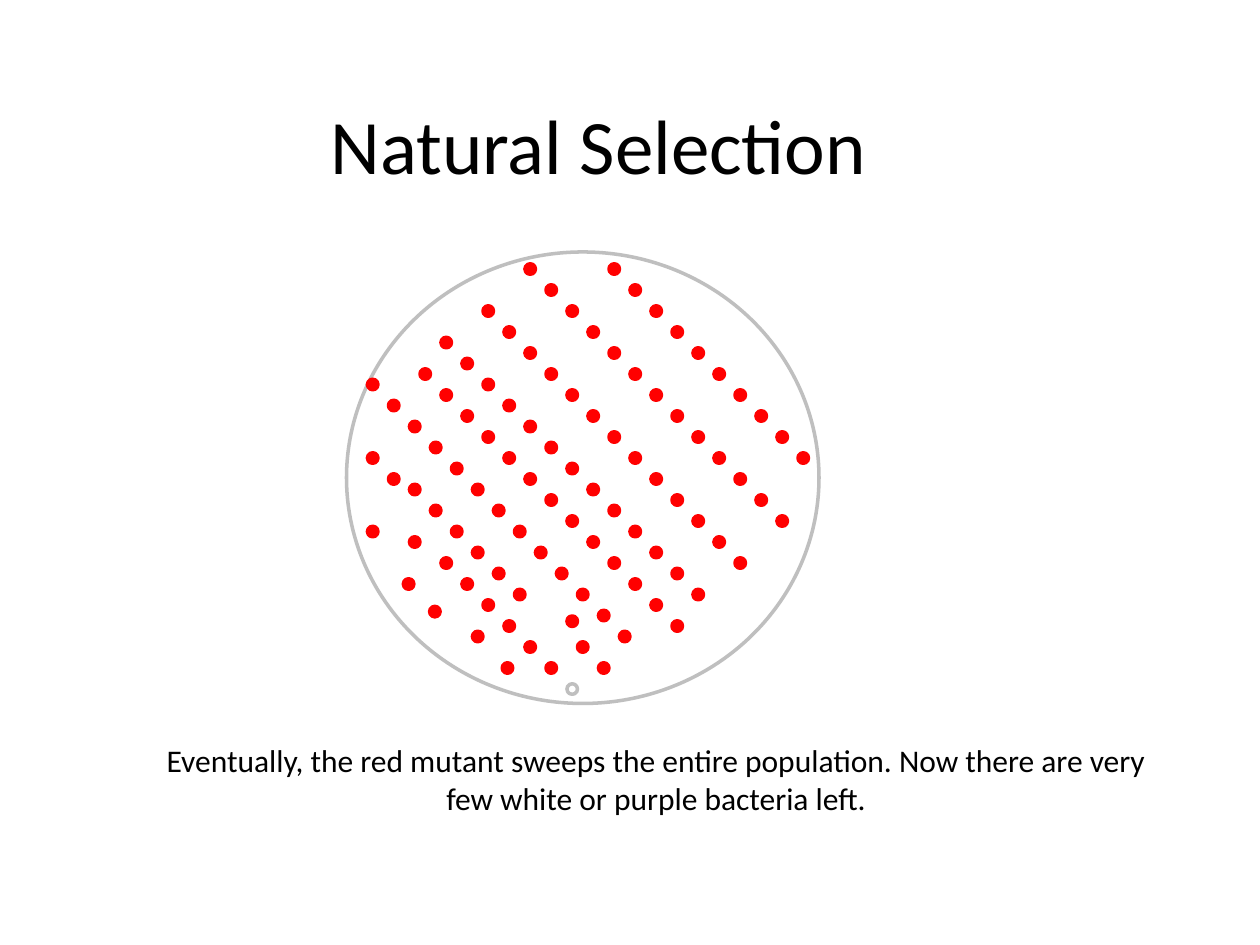
from dataclasses import dataclass

from pptx import Presentation
from pptx.dml.color import RGBColor
from pptx.enum.shapes import MSO_SHAPE as Shape
from pptx.enum.text import MSO_ANCHOR as Anchor, MSO_AUTO_SIZE as AutoSize, PP_ALIGN as Align
from pptx.slide import Slide
from pptx.text.text import TextFrame
from pptx.util import Pt

BLACK, WHITE, GREY, RED = "000000", "FFFFFF", "BFBFBF", "FF0000"
DOT_SIZE = 6
STEP = 12  # each bacterium in a row sits one step right and one step down


@dataclass
class DotRow:
    left: float
    top: float
    count: int = 1


ROWS = [
    DotRow(240, 210.75, 13),
    DotRow(252, 192.75, 13),
    DotRow(276, 174.75, 13),
    DotRow(300, 150.75, 13),
    DotRow(348, 150.75, 10),
    DotRow(252, 318.75, 6),
    DotRow(210, 216.75, 13),
    DotRow(234, 276.75, 6),
    DotRow(210, 258.75, 2),
    DotRow(330, 366.75, 2),
    # Single bacteria near the lower edge
    DotRow(230.5, 330.75),
    DotRow(270, 360.75),
    DotRow(210, 300.75),
    DotRow(287, 378.75),
    DotRow(234, 306.75),
    DotRow(245.5, 346.5),
    DotRow(324, 352),
]


def color(value: str) -> RGBColor:
    return RGBColor.from_string(value)


def add_ellipse(page: Slide, left: float, top: float, width: float, height: float,
                fill: str, line: str) -> None:
    ellipse = page.shapes.add_shape(Shape.OVAL, Pt(left), Pt(top), Pt(width), Pt(height))
    ellipse.shadow.inherit = False
    ellipse.fill.solid()
    ellipse.fill.fore_color.rgb = color(fill)
    ellipse.line.color.rgb = color(line)
    ellipse.line.width = Pt(2)


def add_dot_row(page: Slide, row: DotRow) -> None:
    for index in range(row.count):
        shift = index * STEP
        add_ellipse(page, row.left + shift, row.top + shift, DOT_SIZE, DOT_SIZE, RED, RED)


def write_centred(frame: TextFrame, text: str, size: float) -> None:
    frame.word_wrap = True
    para = frame.paragraphs[0]
    para.alignment = Align.CENTER
    span = para.add_run()
    span.text = text
    span.font.name = "Calibri"
    span.font.size = Pt(size)
    span.font.color.rgb = color(BLACK)


def main() -> None:
    deck = Presentation()
    deck.slide_width, deck.slide_height = Pt(720), Pt(540)
    page = deck.slides.add_slide(deck.slide_layouts.get_by_name("Title Only"))

    # Title
    title = page.shapes.title
    title.left, title.top, title.width, title.height = Pt(36), Pt(24), Pt(612), Pt(116)
    title.text_frame.vertical_anchor = Anchor.MIDDLE
    write_centred(title.text_frame, "Natural Selection", 44)

    # Dish with red mutants and the last white bacterium
    add_ellipse(page, 198, 144, 270, 258, WHITE, GREY)
    for row in ROWS:
        add_dot_row(page, row)
    add_ellipse(page, 324, 390.75, DOT_SIZE, DOT_SIZE, WHITE, GREY)

    # Caption
    box = page.shapes.add_textbox(Pt(87), Pt(420), Pt(576), Pt(51))
    write_centred(box.text_frame, "Eventually, the red mutant sweeps the entire population. "
                  "Now there are very few white or purple bacteria left.", 18)
    box.text_frame.auto_size = AutoSize.SHAPE_TO_FIT_TEXT

    deck.save("out.pptx")


if __name__ == "__main__":
    main()
